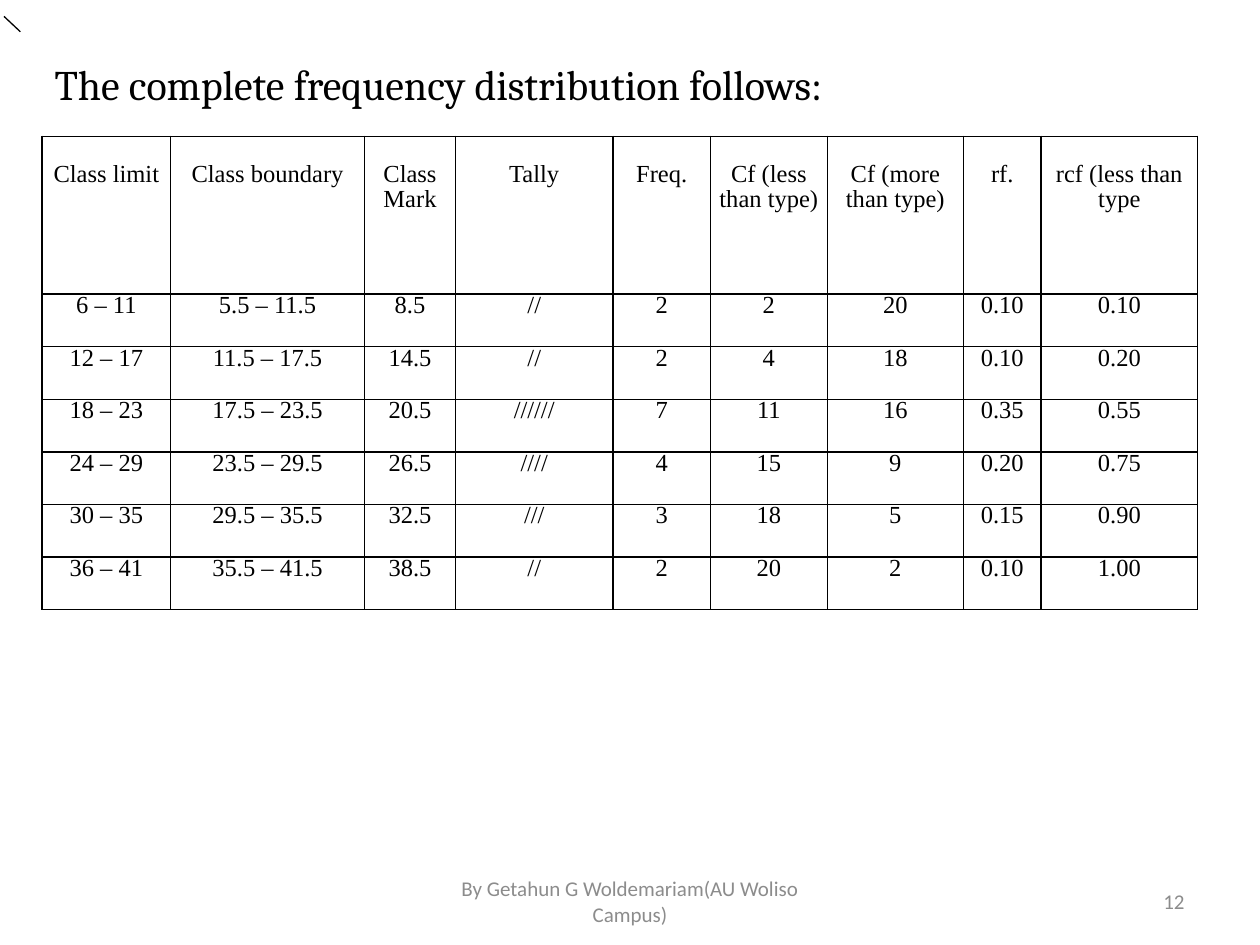
import pptx
import pptx.dml.color
import pptx.enum.shapes
import pptx.enum.text
import pptx.oxml
import pptx.oxml.ns
import pptx.util

Cm = pptx.util.Cm
ALIGN = pptx.enum.text.PP_ALIGN
ANCHOR = pptx.enum.text.MSO_ANCHOR
COLORS = {"ink": "000000", "muted": "8C8C8C"}

HEADERS = ["Class limit", "Class boundary", "Class Mark", "Tally", "Freq.",
           "Cf (less than type)", "Cf (more than type)", "rf.", "rcf (less than type"]
CLASSES = [
    ["6 – 11", "5.5 – 11.5", "8.5", "//", "2", "2", "20", "0.10", "0.10"],
    ["12 – 17", "11.5 – 17.5", "14.5", "//", "2", "4", "18", "0.10", "0.20"],
    ["18 – 23", "17.5 – 23.5", "20.5", "//////", "7", "11", "16", "0.35", "0.55"],
    ["24 – 29", "23.5 – 29.5", "26.5", "////", "4", "15", "9", "0.20", "0.75"],
    ["30 – 35", "29.5 – 35.5", "32.5", "///", "3", "18", "5", "0.15", "0.90"],
    ["36 – 41", "35.5 – 41.5", "38.5", "//", "2", "20", "2", "0.10", "1.00"],
]
COLUMN_WIDTHS = [2.59, 3.91, 1.83, 3.18, 1.96, 2.36, 2.74, 1.57, 3.15]
ROW_HEIGHTS = [3.18] + [1.06] * len(CLASSES)


class SlideBuilder:
    """Hold the colours and the current slide, and add elements to it."""

    def __init__(self, page, colors):
        self.page = page
        self.colors = colors

    def color(self, name):
        return pptx.dml.color.RGBColor.from_string(self.colors[name])

    def apply(self, target, values):
        for name, value in values.items():
            setattr(target, name, value)

    def fill_text(self, frame, text, font, size, color="ink", **para_format):
        para = frame.paragraphs[0]
        self.apply(para, para_format)
        span = para.add_run()
        span.text = text
        self.apply(span.font, {"name": font, "size": pptx.util.Pt(size)})
        span.font.color.rgb = self.color(color)

    def text(self, bounds, text, font, size, color="ink", align=ALIGN.LEFT, anchor=ANCHOR.TOP):
        box = self.page.shapes.add_textbox(*map(Cm, bounds))
        self.apply(box.text_frame, {"word_wrap": True, "vertical_anchor": anchor})
        self.fill_text(box.text_frame, text, font, size, color, alignment=align)

    def line(self, start, end, width):
        straight = pptx.enum.shapes.MSO_CONNECTOR.STRAIGHT
        connector = self.page.shapes.add_connector(straight, *map(Cm, start + end))
        connector.line.width = pptx.util.Pt(width)
        connector.line.color.rgb = self.color("ink")
        effects = pptx.oxml.parse_xml(f'<a:effectLst {pptx.oxml.ns.nsdecls("a")}/>')
        connector._element.spPr.append(effects)

    def borders(self, cell, width):
        properties = cell._tc.get_or_add_tcPr()
        for side in "LRTB":
            properties.append(pptx.oxml.parse_xml(
                f'<a:ln{side} {pptx.oxml.ns.nsdecls("a")} w="{pptx.util.Pt(width)}">'
                f'<a:solidFill><a:srgbClr val="{self.colors["ink"]}"/></a:solidFill></a:ln{side}>'))

    def table(self, left, top, rows, widths, heights, header_margin):
        size = sum(widths), sum(heights)
        frame = self.page.shapes.add_table(
            len(rows), len(widths), *map(Cm, (left, top, *size)))
        table = frame.table
        self.apply(table, {"first_row": False, "horz_banding": False})
        for column, width in zip(table.columns, widths):
            column.width = Cm(width)
        for row, height in zip(table.rows, heights):
            row.height = Cm(height)
        for r, values in enumerate(rows):
            for c, value in enumerate(values):
                cell = table.cell(r, c)
                self.apply(cell, {
                    "margin_left": Cm(0.18), "margin_right": Cm(0.18),
                    "margin_top": Cm(0 if r else header_margin), "margin_bottom": Cm(0)})
                self.borders(cell, 1)
                cell.fill.background()
                self.fill_text(cell.text_frame, value, "Times New Roman", 14,
                               alignment=ALIGN.CENTER, line_spacing=0.9)


def main():
    deck = pptx.Presentation()
    deck.slide_width, deck.slide_height = Cm(25.4), Cm(19.05)
    page = deck.slides.add_slide(deck.slide_layouts[6])
    builder = SlideBuilder(page, COLORS)
    builder.table(0.85, 2.75, [HEADERS] + CLASSES, COLUMN_WIDTHS, ROW_HEIGHTS, 0.54)
    builder.line((0.08, 0.33), (0.41, 0.64), 0.75)
    builder.text((0.85, 1.06, 20.75, 1.28),
                 "The complete frequency distribution follows:", "Cambria", 24)
    footer = {"font": "Calibri", "size": 12, "color": "muted", "anchor": ANCHOR.MIDDLE}
    builder.text((18.2, 17.66, 5.93, 1.01), "12", align=ALIGN.RIGHT, **footer)
    builder.text((8.68, 17.66, 8.04, 1.01),
                 "By Getahun G Woldemariam(AU Woliso Campus)", align=ALIGN.CENTER, **footer)
    deck.save("out.pptx")


if __name__ == "__main__":
    main()
